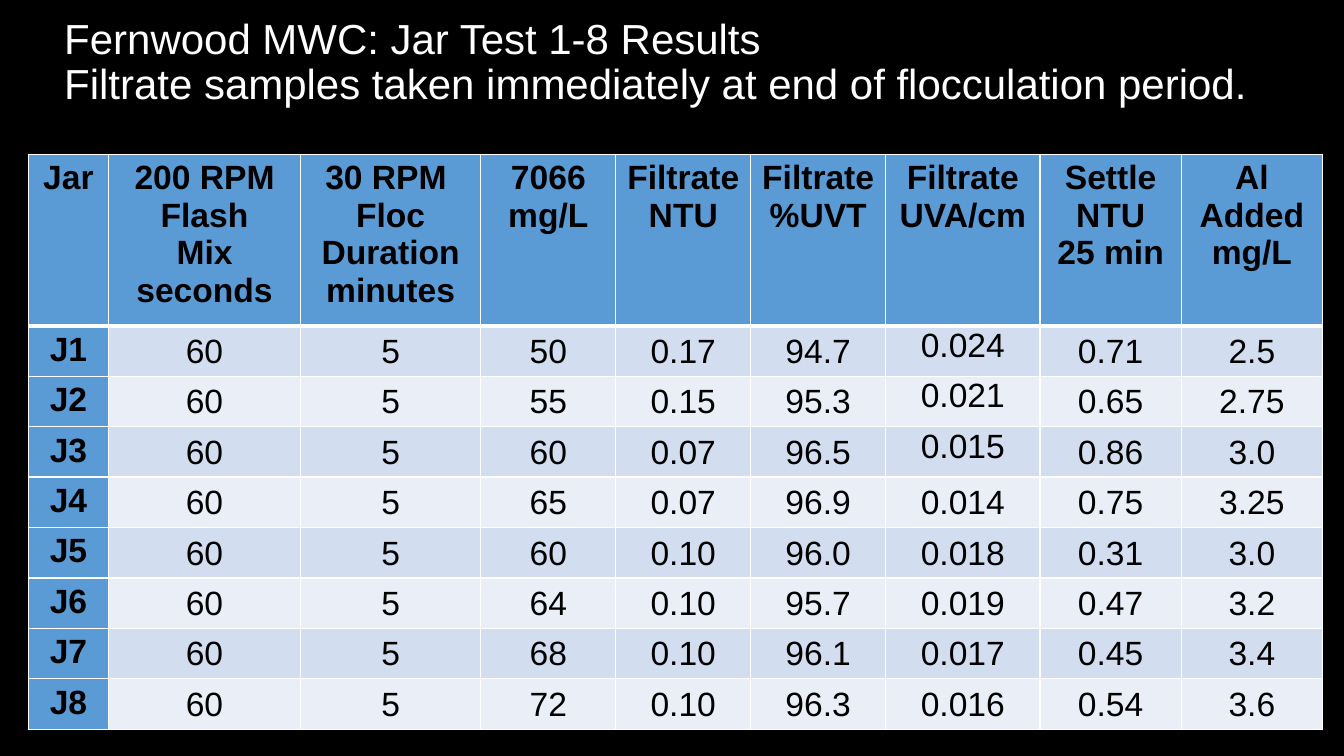
from dataclasses import dataclass

from lxml import etree
from pptx import Presentation
from pptx.dml.color import RGBColor
from pptx.enum.text import MSO_ANCHOR, PP_ALIGN
from pptx.oxml.ns import qn
from pptx.util import Cm, Pt

TOP, MIDDLE = MSO_ANCHOR.TOP, MSO_ANCHOR.MIDDLE
CENTER, LEFT = PP_ALIGN.CENTER, PP_ALIGN.LEFT

# Content
TITLE = ("Fernwood MWC: Jar Test 1-8 Results",
         "Filtrate samples taken immediately at end of flocculation period.")
HEADERS = [
    "Jar", "200 RPM\nFlash\nMix\nseconds", "30 RPM \nFloc\nDuration\nminutes",
    "7066\nmg/L", "Filtrate\nNTU", "Filtrate\n%UVT", "Filtrate\nUVA/cm",
    "Settle\nNTU\n25 min", "Al\nAdded\nmg/L",
]
JARS = [
    ("J1", "60", "5", "50", "0.17", "94.7", "0.024", "0.71", "2.5"),
    ("J2", "60", "5", "55", "0.15", "95.3", "0.021", "0.65", "2.75"),
    ("J3", "60", "5", "60", "0.07", "96.5", "0.015", "0.86", "3.0"),
    ("J4", "60", "5", "65", "0.07", "96.9", "0.014", "0.75", "3.25"),
    ("J5", "60", "5", "60", "0.10", "96.0", "0.018", "0.31", "3.0"),
    ("J6", "60", "5", "64", "0.10", "95.7", "0.019", "0.47", "3.2"),
    ("J7", "60", "5", "68", "0.10", "96.1", "0.017", "0.45", "3.4"),
    ("J8", "60", "5", "72", "0.10", "96.3", "0.016", "0.54", "3.6"),
]
COLUMN_WIDTHS = [2.03, 4.83, 4.55, 3.4, 3.4, 3.4, 3.89, 3.56, 3.56]
HEADER_HEIGHT, JAR_HEIGHT = 4.03, 1.2
UVA_COLUMN, LAST_TOP_ALIGNED_JAR = 6, 3


@dataclass(frozen=True)
class Theme:
    font: str = "Arial"
    background: str = "000000"
    title: str = "FFFFFF"
    text: str = "000000"
    heading: str = "5B9BD5"
    bands: tuple = ("EAEFF7", "D2DEEF")
    border: str = "FFFFFF"
    title_size: int = 30
    table_size: int = 24
    thin: int = 1
    thick: int = 3


THEME = Theme()


def format_paragraph(para, size, color, align, bold=False):
    para.alignment = align
    for span in para.runs:
        span.font.name = THEME.font
        span.font.size = Pt(size)
        span.font.bold = bold
        span.font.color.rgb = RGBColor.from_string(color)


def add_borders(cell, row):
    properties = cell._tc.get_or_add_tcPr()
    widths = {"a:lnL": THEME.thin, "a:lnR": THEME.thin,
              "a:lnT": THEME.thick if row == 1 else THEME.thin,
              "a:lnB": THEME.thick if row == 0 else THEME.thin}
    for tag, width in widths.items():
        line = etree.SubElement(properties, qn(tag), w=str(Pt(width)))
        fill = etree.SubElement(line, qn("a:solidFill"))
        etree.SubElement(fill, qn("a:srgbClr"), val=THEME.border)


def fill_cell(cell, row, column, text):
    heading = row == 0 or column == 0
    add_borders(cell, row)
    cell.fill.solid()
    color = THEME.heading if heading else THEME.bands[row % 2]
    cell.fill.fore_color.rgb = RGBColor.from_string(color)
    cell.text_frame.text = text
    for para in cell.text_frame.paragraphs:
        format_paragraph(para, THEME.table_size, THEME.text, CENTER, heading)
    if not heading:
        cell.margin_left = cell.margin_right = cell.margin_top = Cm(0.03)
        cell.margin_bottom = 0
        raised = column == UVA_COLUMN and row <= LAST_TOP_ALIGNED_JAR
        cell.vertical_anchor = TOP if raised else MIDDLE


def add_title(page):
    box = page.shapes.add_textbox(Cm(1.37), Cm(0.33), Cm(32.18), Cm(3.68))
    frame = box.text_frame
    frame.word_wrap = True
    frame.vertical_anchor = TOP
    para = frame.paragraphs[0]
    para.text = "\v".join(TITLE)
    para.line_spacing = 0.9
    format_paragraph(para, THEME.title_size, THEME.title, LEFT)


def add_results(page):
    rows = [HEADERS, *JARS]
    heights = [HEADER_HEIGHT] + [JAR_HEIGHT] * len(JARS)
    table = page.shapes.add_table(
        len(rows), len(HEADERS), Cm(0.71), Cm(3.89),
        Cm(sum(COLUMN_WIDTHS)), Cm(sum(heights))).table
    for column, width in zip(table.columns, COLUMN_WIDTHS):
        column.width = Cm(width)
    for row, height in zip(table.rows, heights):
        row.height = Cm(height)
    for row, values in enumerate(rows):
        for column, text in enumerate(values):
            fill_cell(table.cell(row, column), row, column, text)


def main():
    deck = Presentation()
    deck.slide_width, deck.slide_height = Cm(33.87), Cm(19.05)
    page = deck.slides.add_slide(deck.slide_layouts[6])
    page.background.fill.solid()
    page.background.fill.fore_color.rgb = RGBColor.from_string(THEME.background)
    add_title(page)
    add_results(page)
    deck.save("out.pptx")


if __name__ == "__main__":
    main()
